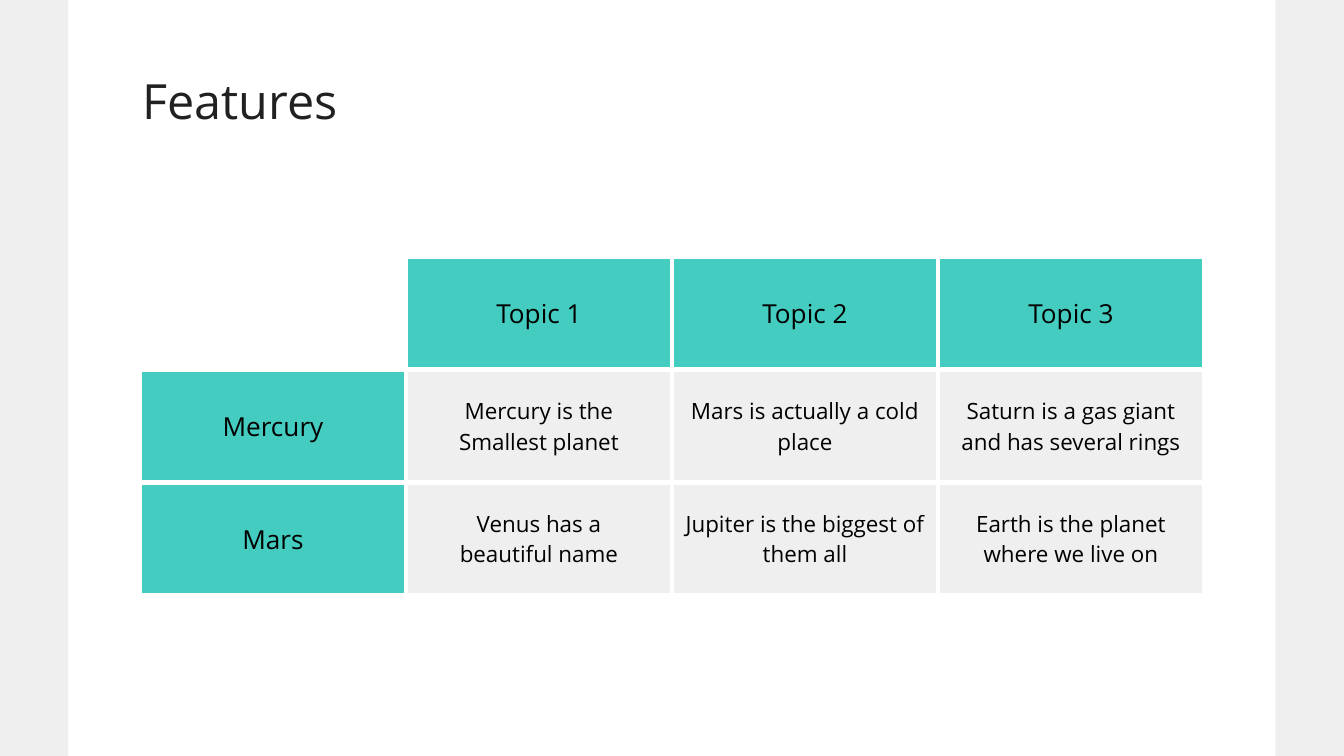
"""Build a slide with a features table of planets by topic."""
from dataclasses import dataclass
from typing import Optional

from lxml.etree import SubElement
from pptx import Presentation
from pptx.dml.color import RGBColor
from pptx.enum.shapes import MSO_SHAPE as SHAPE
from pptx.enum.text import MSO_ANCHOR as ANCHOR, PP_ALIGN as ALIGN
from pptx.oxml.ns import qn
from pptx.util import Pt

TEAL = RGBColor(0x44, 0xCC, 0xC0)
GREY = RGBColor(0xEF, 0xEF, 0xEF)
WHITE = RGBColor(0xFF, 0xFF, 0xFF)
BLACK = RGBColor(0, 0, 0)
DARK = RGBColor(0x21, 0x21, 0x21)
FONT = "Open Sans"
WIDTH, HEIGHT = 720, 405
BAND_W = 36.72
COL_W, ROW_H = 142.5, 60.5
INSET = 7.2
BORDER = 3


@dataclass(frozen=True)
class CellStyle:
    fill: Optional[RGBColor]
    size: float


HEADER = CellStyle(TEAL, 14)
BODY = CellStyle(GREY, 12)
CORNER = CellStyle(None, 14)

ROWS = [
    ["", "Topic 1", "Topic 2", "Topic 3"],
    ["Mercury", "Mercury is the\nSmallest planet", "Mars is actually a cold place",
     "Saturn is a gas giant and has several rings"],
    ["Mars", "Venus has a\nbeautiful name", "Jupiter is the biggest of them all",
     "Earth is the planet where we live on"],
]


def write(tf, text: str, *, size: float, color: RGBColor = BLACK, align=ALIGN.LEFT) -> None:
    tf.word_wrap = True
    for i, line in enumerate(text.split("\n")):
        p = tf.paragraphs[0] if i == 0 else tf.add_paragraph()
        p.alignment = align
        r = p.add_run()
        r.text = line
        r.font.name, r.font.size = FONT, Pt(size)
        r.font.color.rgb = color


def set_insets(box) -> None:
    box.margin_left = box.margin_right = Pt(INSET)
    box.margin_top = box.margin_bottom = Pt(INSET)


def add_band(s, left: float) -> None:
    sp = s.shapes.add_shape(SHAPE.RECTANGLE, Pt(left), Pt(0), Pt(BAND_W), Pt(HEIGHT))
    sp.shadow.inherit = False
    sp.fill.solid()
    sp.fill.fore_color.rgb = GREY
    sp.line.fill.background()


def add_title(s, text: str) -> None:
    tf = s.shapes.add_textbox(Pt(69.25), Pt(31), Pt(221), Pt(60)).text_frame
    set_insets(tf)
    write(tf, text, size=26, color=DARK)


def set_borders(cell) -> None:
    props = cell._tc.get_or_add_tcPr()
    for side in ("lnL", "lnR", "lnT", "lnB"):
        ln = SubElement(props, qn(f"a:{side}"), w=str(Pt(BORDER)))
        fill = SubElement(ln, qn("a:solidFill"))
        SubElement(fill, qn("a:srgbClr"), val=str(WHITE))


def fill_cell(cell, text: str, style: CellStyle) -> None:
    set_insets(cell)
    cell.vertical_anchor = ANCHOR.MIDDLE
    set_borders(cell)
    if style.fill is None:
        cell.fill.background()
    else:
        cell.fill.solid()
        cell.fill.fore_color.rgb = style.fill
    if text:
        write(cell.text_frame, text, size=style.size, align=ALIGN.CENTER)


def add_features(s, rows: list[list[str]]) -> None:
    n_rows, n_cols = len(rows), len(rows[0])
    table = s.shapes.add_table(n_rows, n_cols, Pt(75), Pt(137.5),
                               Pt(COL_W * n_cols), Pt(ROW_H * n_rows)).table
    table.first_row = table.horz_banding = False
    for col in table.columns:
        col.width = Pt(COL_W)
    for i, row in enumerate(rows):
        table.rows[i].height = Pt(ROW_H)
        for j, text in enumerate(row):
            style = BODY if i and j else HEADER if i or j else CORNER
            fill_cell(table.cell(i, j), text, style)


def main() -> None:
    prs = Presentation()
    prs.slide_width, prs.slide_height = Pt(WIDTH), Pt(HEIGHT)
    s = prs.slides.add_slide(prs.slide_layouts[6])
    s.background.fill.solid()
    s.background.fill.fore_color.rgb = WHITE
    for left in (0, WIDTH - BAND_W):
        add_band(s, left)
    add_features(s, ROWS)
    add_title(s, "Features")
    prs.save("out.pptx")


if __name__ == "__main__":
    main()
